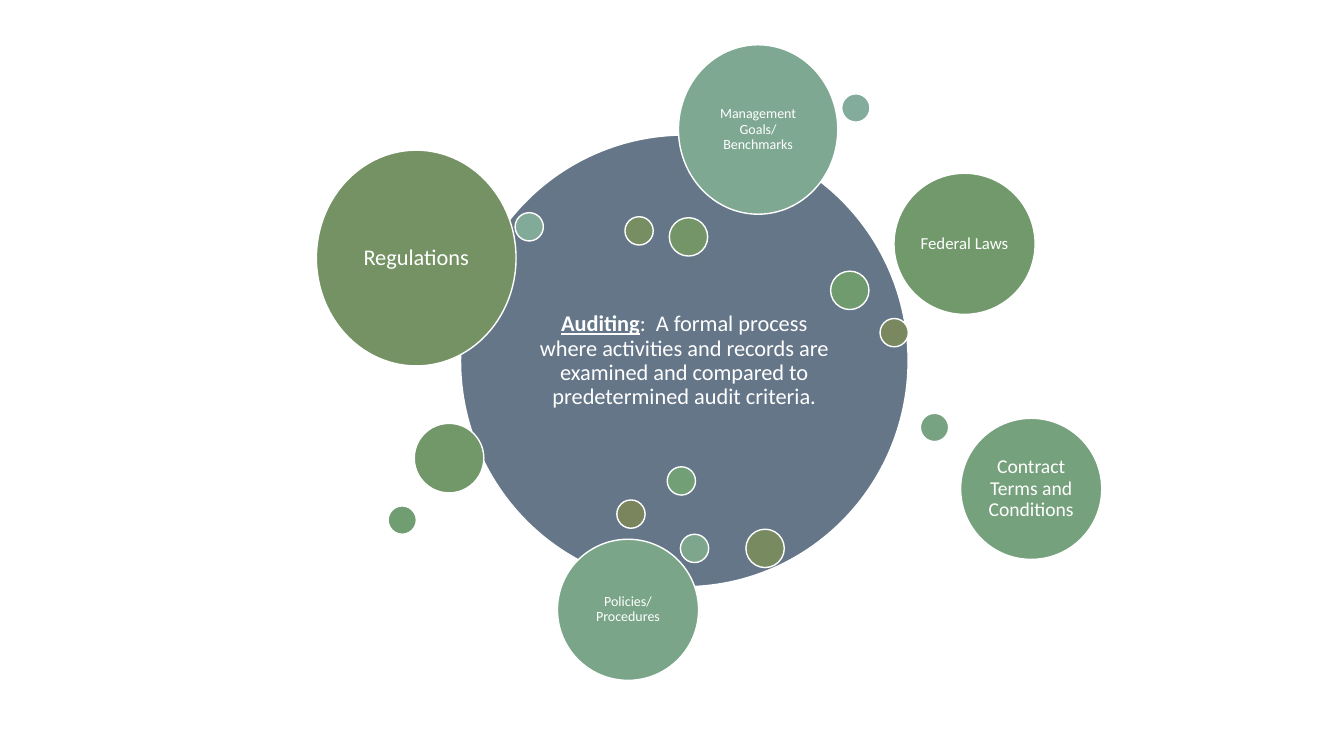
from dataclasses import dataclass

from pptx import Presentation
from pptx.dml.color import RGBColor
from pptx.enum import shapes, text
from pptx.util import Pt


@dataclass(frozen=True)
class Theme:
    font: str = "Calibri"
    white: str = "FFFFFF"
    hub: str = "657689"
    outline: float = 1
    large: float = 16
    medium: float = 14
    normal: float = 12
    small: float = 10
    inset_per_point: float = 0.32
    line_spacing: float = 0.9


THEME = Theme()
DIAGRAM_BOX = (226, 32, 561, 454)
DOT, BEAD, BUBBLE = 20.2, 27.4, 100.8

HUB = (103, 64.5, 319.7, 322.6)
DEFINITION = (
    "Auditing",
    ":  A formal process where activities and records are examined and "
    "compared to predetermined audit criteria.",
)

SATELLITES = [
    (214.6, 325.1, DOT, DOT, "7A855D", "", 0),
    (402.6, 195.5, DOT, DOT, "79885F", "", 0),
    (306.8, 346, BEAD, BEAD, "788A60", "", 0),
    (220.4, 122.8, DOT, DOT, "778D62", "", 0),
    (0, 75.3, 142.6, 154.1, "759265", "Regulations", THEME.large),
    (252.1, 123.5, BEAD, BEAD, "749567", "", 0),
    (69.9, 270.4, 49.7, 49.7, "729769", "", 0),
    (412.6, 91.8, BUBBLE, BUBBLE, "71996B", "Federal Laws", THEME.normal),
    (367.3, 161.7, BEAD, BEAD, "709B6E", "", 0),
    (51.2, 329.4, DOT, DOT, "709D71", "", 0),
    (250.6, 301.4, DOT, DOT, "739F77", "", 0),
    (460.2, 266.8, BUBBLE, BUBBLE, "75A17D",
     "Contract Terms and Conditions", THEME.medium),
    (431.4, 263.2, DOT, DOT, "78A382", "", 0),
    (172.2, 353.2, BUBBLE, BUBBLE, "7AA588",
     "Policies/ Procedures", THEME.small),
    (260, 349.6, DOT, DOT, "7DA68D", "", 0),
    (258.6, 0, 113.8, 121, "7FA893",
     "Management Goals/ Benchmarks", THEME.small),
    (141.9, 119.9, DOT, DOT, "82AA98", "", 0),
    (375.2, 35, DOT, DOT, "84AC9D", "", 0),
]


def add_circle(slide, box, fill):
    circle = slide.shapes.add_shape(
        shapes.MSO_SHAPE.OVAL, *(Pt(length) for length in box))
    circle.shadow.inherit = False
    circle.fill.solid()
    circle.fill.fore_color.rgb = RGBColor.from_string(fill)
    circle.line.color.rgb = RGBColor.from_string(THEME.white)
    circle.line.width = Pt(THEME.outline)
    return circle


def write_label(circle, label, size):
    frame = circle.text_frame
    frame.text = label
    frame.word_wrap = True
    frame.vertical_anchor = text.MSO_ANCHOR.MIDDLE
    inset = Pt(size * THEME.inset_per_point)
    frame.margin_left = frame.margin_right = inset
    frame.margin_top = frame.margin_bottom = inset
    paragraph = frame.paragraphs[0]
    paragraph.alignment = text.PP_ALIGN.CENTER
    paragraph.line_spacing = THEME.line_spacing
    for run in paragraph.runs:
        format_run(run, size)
    return paragraph


def format_run(run, size):
    run.font.name = THEME.font
    run.font.size = Pt(size)
    run.font.color.rgb = RGBColor.from_string(THEME.white)


def add_hub(slide, box):
    term, meaning = DEFINITION
    paragraph = write_label(add_circle(slide, box, THEME.hub), term, THEME.large)
    paragraph.runs[0].font.bold = True
    paragraph.runs[0].font.underline = True
    explanation = paragraph.add_run()
    explanation.text = meaning
    format_run(explanation, THEME.large)


def add_audit_diagram(slide, box):
    left, top, _, _ = box
    hub_x, hub_y, hub_width, hub_height = HUB
    add_hub(slide, (left + hub_x, top + hub_y, hub_width, hub_height))
    for x, y, width, height, fill, label, size in SATELLITES:
        circle = add_circle(slide, (left + x, top + y, width, height), fill)
        if label:
            write_label(circle, label, size)


def main():
    deck = Presentation()
    deck.slide_width, deck.slide_height = Pt(960), Pt(540)
    slide = deck.slides.add_slide(deck.slide_layouts.get_by_name("Blank"))
    add_audit_diagram(slide, DIAGRAM_BOX)
    deck.save("out.pptx")


if __name__ == "__main__":
    main()
